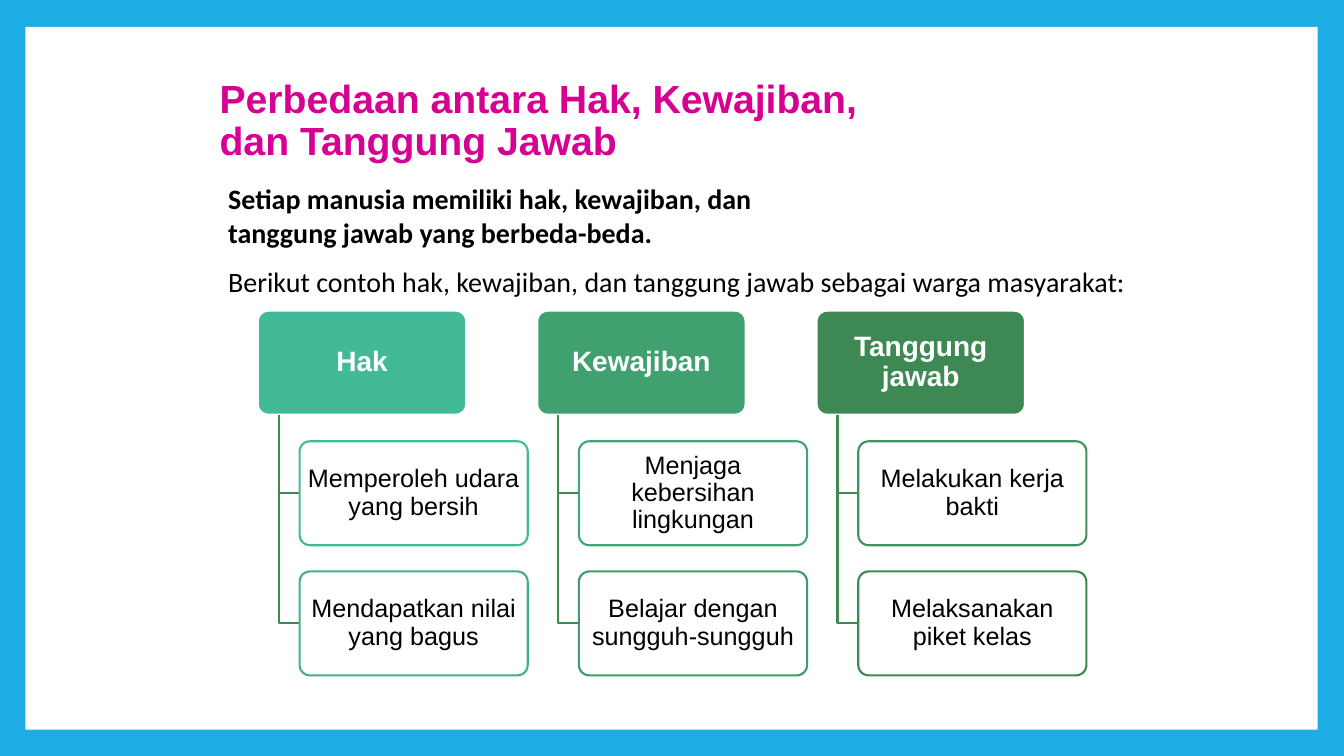
"""Build a slide that compares rights, duties and responsibilities."""
import pptx
import pptx.dml.color
import pptx.enum.shapes
import pptx.enum.text
import pptx.oxml
import pptx.util

Cm = pptx.util.Cm
Pt = pptx.util.Pt
RGBColor = pptx.dml.color.RGBColor
MSO_SHAPE = pptx.enum.shapes.MSO_SHAPE
MSO_ANCHOR = pptx.enum.text.MSO_ANCHOR
MSO_AUTO_SIZE = pptx.enum.text.MSO_AUTO_SIZE
PP_ALIGN = pptx.enum.text.PP_ALIGN

BLUE = RGBColor(0x1C, 0xAD, 0xE4)
WHITE = RGBColor(0xFF, 0xFF, 0xFF)
BLACK = RGBColor(0x00, 0x00, 0x00)
MAGENTA = RGBColor(0xD6, 0x00, 0x93)
TEAL = RGBColor(0x42, 0xBA, 0x97)
TEAL_GREEN = RGBColor(0x42, 0xB0, 0x86)
SEA_GREEN = RGBColor(0x41, 0xA5, 0x77)
MID_GREEN = RGBColor(0x41, 0xA0, 0x70)
LEAF_GREEN = RGBColor(0x40, 0x9B, 0x6A)
FERN_GREEN = RGBColor(0x3F, 0x92, 0x5E)
DARK_GREEN = RGBColor(0x3E, 0x88, 0x53)

COLUMNS = [
    ("Hak", TEAL, [("Memperoleh udara yang bersih", TEAL),
                   ("Mendapatkan nilai yang bagus", TEAL_GREEN)]),
    ("Kewajiban", MID_GREEN, [("Menjaga kebersihan lingkungan", SEA_GREEN),
                              ("Belajar dengan sungguh-sungguh", LEAF_GREEN)]),
    ("Tanggung jawab", DARK_GREEN, [("Melakukan kerja bakti", FERN_GREEN),
                                    ("Melaksanakan piket kelas", DARK_GREEN)]),
]
COLUMN_LEFT, COLUMN_STEP = 6.5, 7.04
HEADER_TOP, HEADER_WIDTH, BOX_HEIGHT = 7.83, 5.25, 2.62
ITEM_TOP, ITEM_STEP, ITEM_WIDTH, ITEM_INDENT = 11.12, 3.28, 5.75, 1.05


def set_font(para, name, size, color, bold):
    para.font.name = name
    para.font.size = Pt(size)
    para.font.color.rgb = color
    para.font.bold = bold


def add_box(left, top, width, text, fill, line, size, color, bold):
    box = page.shapes.add_shape(MSO_SHAPE.ROUNDED_RECTANGLE, Cm(left), Cm(top),
                                Cm(width), Cm(BOX_HEIGHT))
    box.adjustments[0] = 0.1
    box.shadow.inherit = False
    box.fill.solid()
    box.fill.fore_color.rgb = fill
    box.line.color.rgb = line
    box.line.width = Pt(1.5)
    frame = box.text_frame
    frame.word_wrap = True
    frame.vertical_anchor = MSO_ANCHOR.MIDDLE
    frame.margin_left = frame.margin_right = Cm(0.1)
    frame.margin_top = frame.margin_bottom = Cm(0.08)
    para = frame.paragraphs[0]
    para.text = text
    para.alignment = PP_ALIGN.CENTER
    para.line_spacing = 0.9
    set_font(para, "Arial", size, color, bold)
    return box


deck = pptx.Presentation()
deck.slide_width = Cm(33.87)
deck.slide_height = Cm(19.05)
page = deck.slides.add_slide(deck.slide_layouts[5])
page.background.fill.solid()
page.background.fill.fore_color.rgb = BLUE

title = page.shapes.title
title.left, title.top, title.width, title.height = Cm(5.28), Cm(1.7), Cm(17.78), Cm(2.74)
title.text_frame.word_wrap = True
title.text_frame.auto_size = MSO_AUTO_SIZE.NONE
title.text_frame.vertical_anchor = MSO_ANCHOR.MIDDLE
heading = title.text_frame.paragraphs[0]
heading.text = "Perbedaan antara Hak, Kewajiban, dan Tanggung Jawab"
heading.alignment = PP_ALIGN.LEFT
heading.line_spacing = 0.9
set_font(heading, "Arial", 28, MAGENTA, True)

panel = page.shapes.add_shape(MSO_SHAPE.RECTANGLE, Cm(0.64), Cm(0.68), Cm(32.57), Cm(17.71))
panel.shadow.inherit = False
panel.fill.solid()
panel.fill.fore_color.rgb = WHITE
panel.line.fill.background()
title.element.addprevious(panel.element)

for column, (header, header_fill, items) in enumerate(COLUMNS):
    left = COLUMN_LEFT + column * COLUMN_STEP
    add_box(left, HEADER_TOP, HEADER_WIDTH, header, header_fill, WHITE, 20, WHITE, True)
    trunk, item_left = left + ITEM_INDENT / 2, left + ITEM_INDENT
    for row, (text, outline) in enumerate(items):
        top = ITEM_TOP + row * ITEM_STEP
        middle = top + BOX_HEIGHT / 2
        builder = page.shapes.build_freeform(Cm(trunk), Cm(HEADER_TOP + BOX_HEIGHT))
        builder.add_line_segments([(Cm(trunk), Cm(middle)), (Cm(item_left), Cm(middle))],
                                  close=False)
        branch = builder.convert_to_shape()
        branch.shadow.inherit = False
        branch.fill.background()
        branch.line.color.rgb = DARK_GREEN
        branch.line.width = Pt(1.5)
        item = add_box(item_left, top, ITEM_WIDTH, text, WHITE, outline, 18, BLACK, False)
        fill_color = item.fill._xPr.solidFill.srgbClr
        alpha = pptx.oxml.parse_xml(
            '<a:alpha xmlns:a="http://schemas.openxmlformats.org/drawingml/2006/main" val="90000"/>')
        fill_color.append(alpha)

for text, top, width, height, bold in [
    ("Setiap manusia memiliki hak, kewajiban, dan tanggung jawab yang berbeda-beda.",
     4.45, 16.3, 1.96, True),
    ("Berikut contoh hak, kewajiban, dan tanggung jawab sebagai warga masyarakat:",
     6.55, 24.13, 1.11, False),
]:
    note = page.shapes.add_textbox(Cm(5.5), Cm(top), Cm(width), Cm(height))
    note.text_frame.word_wrap = True
    para = note.text_frame.paragraphs[0]
    para.text = text
    set_font(para, "Calibri", 20, BLACK, bold)

deck.save("out.pptx")
